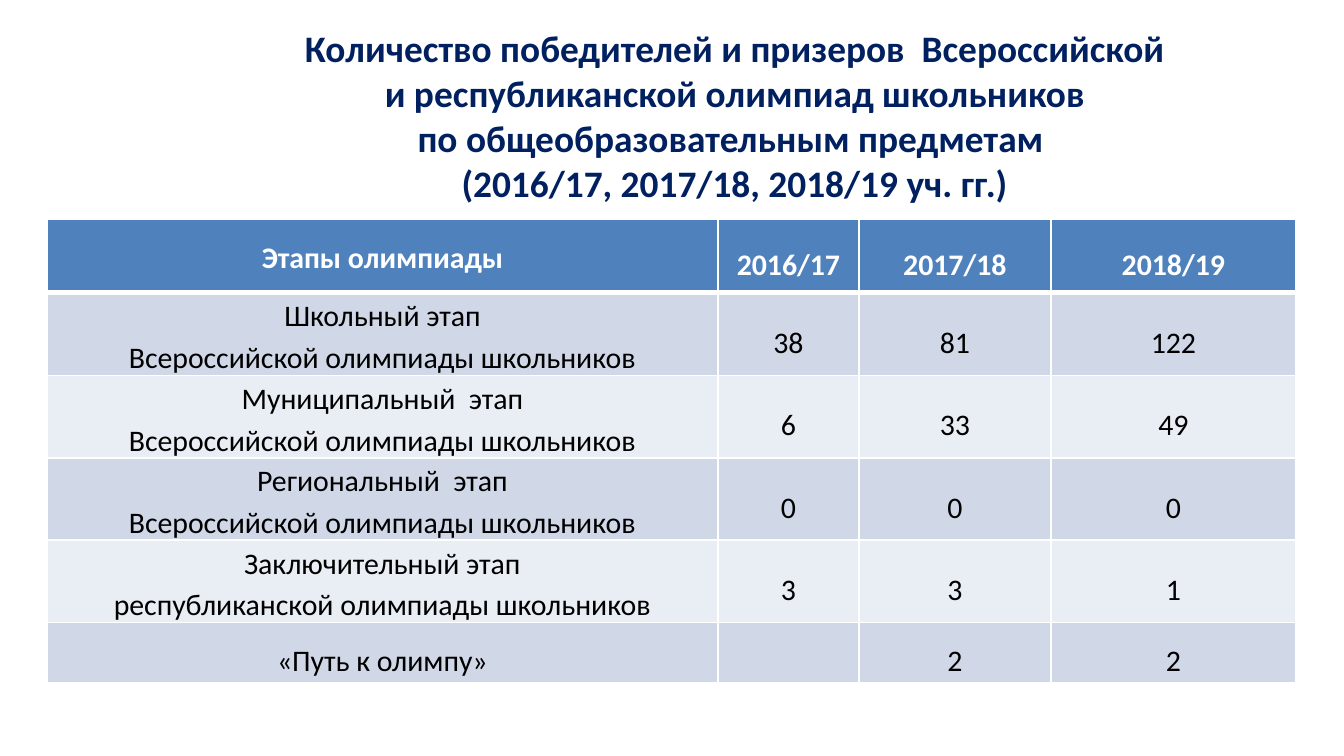
import dataclasses

import lxml.etree
import pptx
import pptx.dml.color
import pptx.enum.text
import pptx.oxml.ns
import pptx.util

SCALE = 914400 / 134.4


def px(length):
    return pptx.util.Emu(round(length * SCALE))


def color(value):
    return pptx.dml.color.RGBColor.from_string(value)


@dataclasses.dataclass(frozen=True)
class Theme:
    font: str = "Calibri"
    title_size: int = 20
    table_size: int = 16
    title: str = "002060"
    header_text: str = "FFFFFF"
    body_text: str = "000000"
    header_fill: str = "4F81BD"
    band_fills: tuple = ("D0D8E8", "E9EDF4")
    border: str = "FFFFFF"


def write_text(frame, text, *, font, size, text_color, bold=False, spacing=None):
    for index, line in enumerate(text.split("\n")):
        paragraph = frame.paragraphs[0] if index == 0 else frame.add_paragraph()
        paragraph.alignment = pptx.enum.text.PP_ALIGN.CENTER
        paragraph.line_spacing = spacing
        run = paragraph.add_run()
        run.text = line
        run.font.name = font
        run.font.size = pptx.util.Pt(size)
        run.font.bold = bold
        run.font.color.rgb = color(text_color)


class SlideBuilder:
    def __init__(self, slide, theme):
        self.slide = slide
        self.theme = theme

    def title(self, text, left, top, width, height):
        frame = self.slide.shapes.add_textbox(px(left), px(top), px(width), px(height)).text_frame
        frame.word_wrap = True
        frame.auto_size = pptx.enum.text.MSO_AUTO_SIZE.SHAPE_TO_FIT_TEXT
        write_text(frame, text, font=self.theme.font, size=self.theme.title_size,
                   text_color=self.theme.title, bold=True)

    def borders(self, cell, top, bottom):
        properties = cell._tc.get_or_add_tcPr()
        for side, points in (("L", 1), ("R", 1), ("T", top), ("B", bottom)):
            line = lxml.etree.SubElement(properties, pptx.oxml.ns.qn(f"a:ln{side}"),
                                         w=str(pptx.util.Pt(points)))
            fill = lxml.etree.SubElement(line, pptx.oxml.ns.qn("a:solidFill"))
            lxml.etree.SubElement(fill, pptx.oxml.ns.qn("a:srgbClr"), val=self.theme.border)

    def cell(self, cell, text, row):
        theme = self.theme
        header = row == 0
        self.borders(cell, top=3 if row == 1 else 1, bottom=3 if header else 1)
        cell.fill.solid()
        cell.fill.fore_color.rgb = color(
            theme.header_fill if header else theme.band_fills[(row - 1) % 2])
        cell.vertical_anchor = pptx.enum.text.MSO_ANCHOR.MIDDLE
        cell.margin_left = cell.margin_right = px(9)
        cell.margin_top = cell.margin_bottom = 0
        if text:
            stage = "этап" in text.lower()
            write_text(cell.text_frame, text, font=theme.font, size=theme.table_size,
                       text_color=theme.header_text if header else theme.body_text,
                       bold=header, spacing=1.15 if stage else 1.5)

    def table(self, rows, left, top, widths, heights):
        table = self.slide.shapes.add_table(
            len(rows), len(widths), px(left), px(top),
            px(sum(widths)), px(sum(heights))).table
        for column, width in zip(table.columns, widths):
            column.width = px(width)
        for index, (values, height) in enumerate(zip(rows, heights)):
            table.rows[index].height = px(height)
            for column, text in enumerate(values):
                self.cell(table.cell(index, column), text, index)


def main():
    presentation = pptx.Presentation()
    presentation.slide_width = px(1344)
    presentation.slide_height = px(756)
    slide = presentation.slides.add_slide(presentation.slide_layouts[6])
    builder = SlideBuilder(slide, Theme())

    builder.title(
        "Количество победителей и призеров  Всероссийской\n"
        "и республиканской олимпиад школьников\n"
        "по общеобразовательным предметам \n"
        "(2016/17, 2017/18, 2018/19 уч. гг.)",
        left=174, top=19, width=1122, height=195)

    national = "Всероссийской олимпиады школьников"
    results = [
        ("Этапы олимпиады", "2016/17", "2017/18", "2018/19"),
        (f"Школьный этап\n{national}", "38", "81", "122"),
        (f"Муниципальный  этап\n{national}", "6", "33", "49"),
        (f"Региональный  этап\n{national}", "0", "0", "0"),
        ("Заключительный этап\nреспубликанской олимпиады школьников", "3", "3", "1"),
        ("«Путь к олимпу»", "", "2", "2"),
    ]
    builder.table(results, left=47, top=219, widths=[671, 141, 192, 245],
                  heights=[74] + [75] * 4 + [60])

    presentation.save("out.pptx")


if __name__ == "__main__":
    main()
